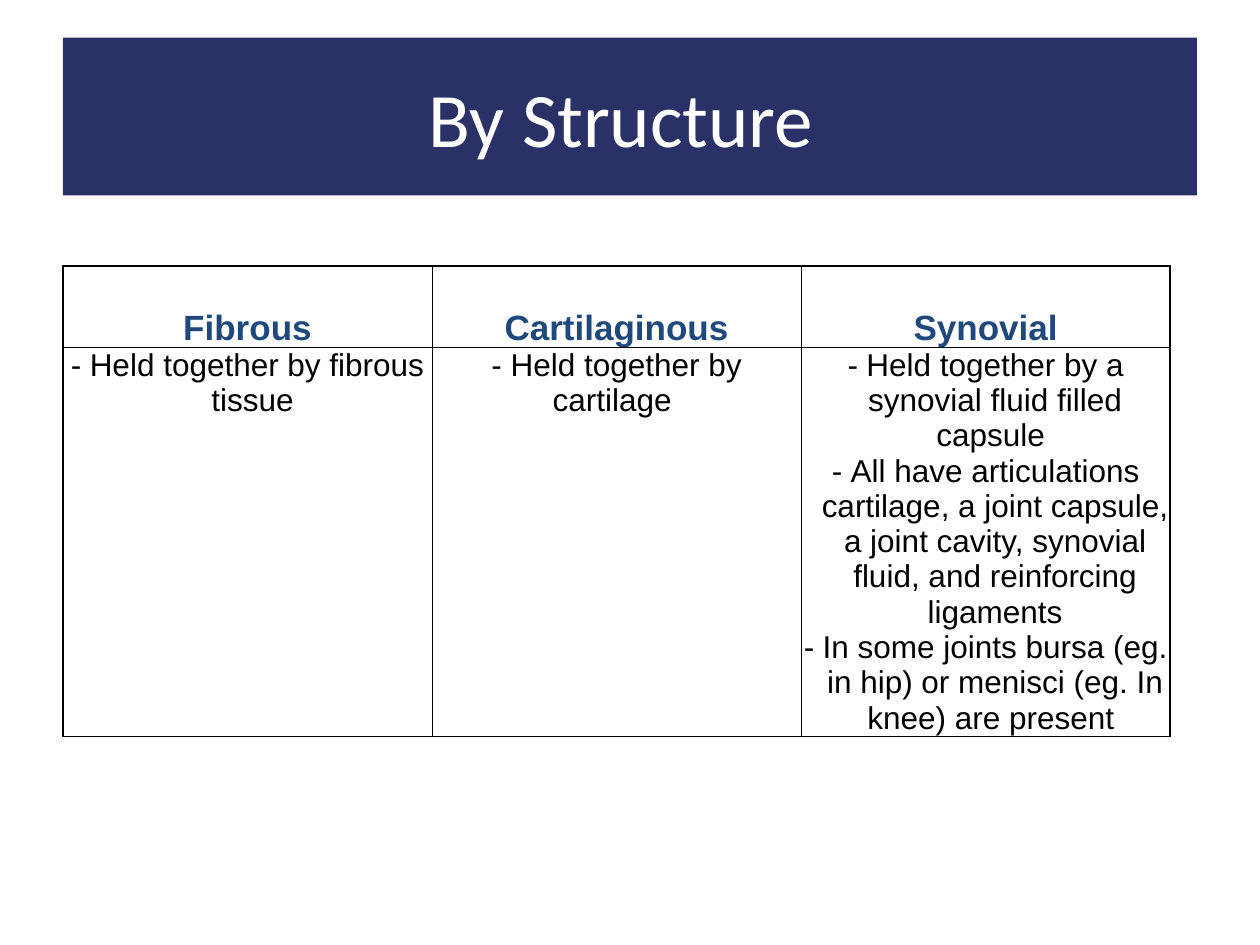
from dataclasses import dataclass

from lxml.etree import SubElement
from pptx import Presentation
from pptx.dml.color import RGBColor
from pptx.enum.shapes import MSO_SHAPE
from pptx.enum.text import MSO_ANCHOR, PP_ALIGN
from pptx.oxml.ns import qn
from pptx.util import Cm, Pt

NAVY = RGBColor(0x29, 0x31, 0x67)
BLUE = RGBColor(0x1F, 0x49, 0x7D)
BLACK = RGBColor(0, 0, 0)
WHITE = RGBColor(0xFF, 0xFF, 0xFF)

LEFT = Cm(1.27)
TABLE_TOP = Cm(5.36)
COL_WIDTH = Cm(7.44)
ROW_HEIGHTS = (Cm(1.65), Cm(7.83))
HANGING = Cm(0.38)
OUTER, INNER = Pt(1.25), Pt(0.75)


@dataclass(frozen=True)
class TextStyle:
    font: str
    size: int
    color: RGBColor
    bold: bool = False


@dataclass(frozen=True)
class JointType:
    name: str
    features: tuple[str, ...]
    bulleted: bool = True


TITLE = TextStyle("Calibri", 44, WHITE)
HEADING = TextStyle("Arial", 20, BLUE, True)
BODY = TextStyle("Arial", 18, BLACK)

JOINT_TYPES = (
    JointType("Fibrous", ("Held together by fibrous tissue ",)),
    JointType("Cartilaginous", ("- Held together by cartilage ",), bulleted=False),
    JointType("Synovial", (
        "Held together by a synovial fluid filled capsule ",
        "All have articulations cartilage, a joint capsule, a joint cavity, "
        "synovial fluid, and reinforcing ligaments",
        "In some joints bursa (eg. in hip) or menisci (eg. In knee) are present ",
    )),
)


def add_dash(p) -> None:
    """Give a paragraph a dash bullet with a hanging indent."""
    pPr = p._p.get_or_add_pPr()
    pPr.set("marL", str(HANGING))
    pPr.set("indent", str(-HANGING))
    SubElement(pPr, qn("a:buFont"), typeface="Arial")
    SubElement(pPr, qn("a:buChar"), char="-")


def write(tf, lines: tuple[str, ...], style: TextStyle, bulleted: bool = False) -> None:
    tf.word_wrap = True
    for i, line in enumerate(lines):
        p = tf.add_paragraph() if i else tf.paragraphs[0]
        p.alignment = PP_ALIGN.CENTER
        if bulleted:
            add_dash(p)
        r = p.add_run()
        r.text = line
        r.font.name = style.font
        r.font.size = Pt(style.size)
        r.font.bold = style.bold
        r.font.color.rgb = style.color


def format_cell(cell, first_row: bool, first_col: bool, last_col: bool) -> None:
    """Clear margins and fill, and rule the cell with a heavier outer frame."""
    cell.margin_left = cell.margin_right = cell.margin_top = cell.margin_bottom = 0
    cell.vertical_anchor = MSO_ANCHOR.BOTTOM if first_row else MSO_ANCHOR.TOP
    tcPr = cell._tc.get_or_add_tcPr()
    edges = (("L", first_col), ("R", last_col), ("T", first_row), ("B", False))
    for side, is_outer in edges:
        ln = SubElement(tcPr, qn(f"a:ln{side}"), w=str(OUTER if is_outer else INNER))
        SubElement(SubElement(ln, qn("a:solidFill")), qn("a:srgbClr"), val=str(BLACK))
    cell.fill.background()


def add_title(s, text: str) -> None:
    sp = s.shapes.add_shape(MSO_SHAPE.RECTANGLE, LEFT, Cm(0.76), Cm(22.86), Cm(3.18))
    sp.shadow.inherit = False
    sp.fill.solid()
    sp.fill.fore_color.rgb = NAVY
    sp.line.fill.background()
    tf = sp.text_frame
    tf.vertical_anchor = MSO_ANCHOR.MIDDLE
    tf.margin_left = tf.margin_right = tf.margin_top = tf.margin_bottom = Cm(0.25)
    write(tf, (text,), TITLE)


def add_joint_table(s, joints: tuple[JointType, ...]) -> None:
    table = s.shapes.add_table(len(ROW_HEIGHTS), len(joints), LEFT, TABLE_TOP,
                               COL_WIDTH * len(joints), sum(ROW_HEIGHTS)).table
    table.first_row = table.horz_banding = False
    for row, height in zip(table.rows, ROW_HEIGHTS):
        row.height = height
    for col, joint in enumerate(joints):
        table.columns[col].width = COL_WIDTH
        head, body = table.cell(0, col), table.cell(1, col)
        for cell in (head, body):
            format_cell(cell, cell is head, col == 0, col == len(joints) - 1)
        write(head.text_frame, (joint.name,), HEADING)
        write(body.text_frame, joint.features, BODY, joint.bulleted)


def main() -> None:
    prs = Presentation()
    prs.slide_width, prs.slide_height = Cm(25.4), Cm(19.05)
    s = prs.slides.add_slide(prs.slide_layouts[6])
    add_title(s, "By Structure ")
    add_joint_table(s, JOINT_TYPES)
    prs.save("out.pptx")


if __name__ == "__main__":
    main()
